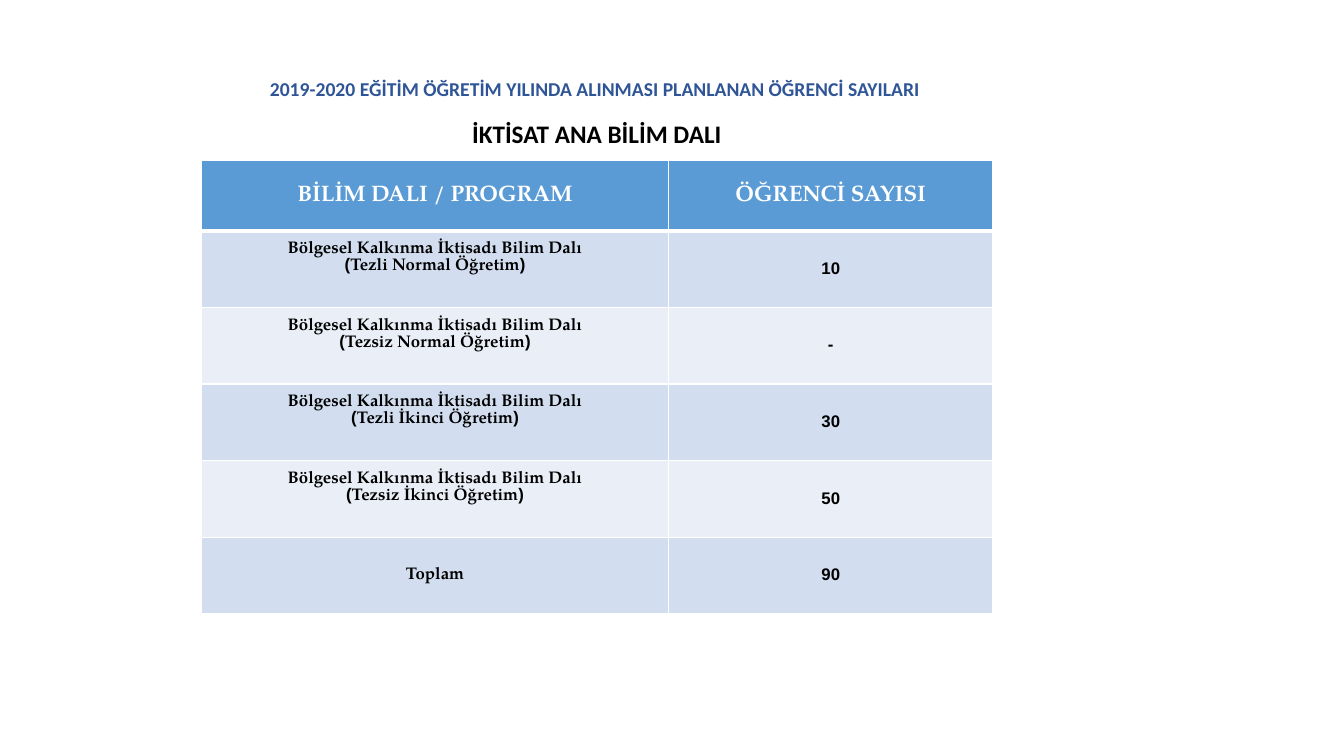
"""Build the slide of planned student numbers for the economics department."""
from lxml.etree import SubElement
from pptx import Presentation
from pptx.dml.color import RGBColor
from pptx.enum.text import MSO_ANCHOR, MSO_AUTO_SIZE, PP_ALIGN
from pptx.oxml.ns import qn
from pptx.util import Inches, Pt

COLORS = {
    "heading": "2F5597",
    "text": "000000",
    "white": "FFFFFF",
    "header": "5B9BD5",
    "odd": "D2DEEF",
    "even": "EAEFF7",
}
FORMATS = {
    "heading": {"name": "Calibri", "size": Pt(14), "bold": True},
    "department": {"name": "Calibri", "size": Pt(18), "bold": True},
    "header": {"name": "TeX Gyre Pagella", "size": Pt(16), "bold": True},
    "body": {"name": "TeX Gyre Pagella", "size": Pt(12), "bold": True},
}
PROGRAM = "Bölgesel Kalkınma İktisadı Bilim Dalı\n"
ROWS = [
    ("BİLİM DALI / PROGRAM", "ÖĞRENCİ SAYISI"),
    (PROGRAM + "(Tezli Normal Öğretim)", "10"),
    (PROGRAM + "(Tezsiz Normal Öğretim)", "-"),
    (PROGRAM + "(Tezli İkinci Öğretim)", "30"),
    (PROGRAM + "(Tezsiz İkinci Öğretim)", "50"),
    ("Toplam", "90"),
]


def write(frame, text, style, color):
    frame.text = text
    for paragraph in frame.paragraphs:
        paragraph.alignment = PP_ALIGN.CENTER
        for run in paragraph.runs:
            for attribute, value in FORMATS[style].items():
                setattr(run.font, attribute, value)
            run.font.color.rgb = RGBColor.from_string(COLORS[color])


def add_border(cell, side, points):
    line = SubElement(cell._tc.get_or_add_tcPr(), qn(f"a:ln{side}"), w=str(Pt(points)))
    SubElement(SubElement(line, qn("a:solidFill")), qn("a:srgbClr"), val=COLORS["white"])


prs = Presentation()
prs.slide_width, prs.slide_height = Inches(13.33), Inches(7.5)
slide = prs.slides.add_slide(prs.slide_layouts[5])

heading = slide.shapes.title
heading.left, heading.top = Inches(2.4), Inches(0.71)
heading.width, heading.height = Inches(7.05), Inches(0.34)
write(heading.text_frame, "2019-2020 EĞİTİM ÖĞRETİM YILINDA ALINMASI PLANLANAN ÖĞRENCİ SAYILARI ", "heading", "heading")
heading.text_frame.vertical_anchor = MSO_ANCHOR.TOP
heading.text_frame.auto_size = MSO_AUTO_SIZE.NONE

department = slide.shapes.add_textbox(Inches(4.57), Inches(1.12), Inches(2.7), Inches(0.4))
department.text_frame.word_wrap = False
write(department.text_frame, "İKTİSAT ANA BİLİM DALI", "department", "text")

quotas = slide.shapes.add_table(len(ROWS), 2, Inches(2), Inches(1.59), Inches(7.85), Inches(4.5)).table
for column, width in zip(quotas.columns, (4.63, 3.22)):
    column.width = Inches(width)

for row_index, values in enumerate(ROWS):
    is_header = row_index == 0
    quotas.rows[row_index].height = Inches(0.7 if is_header else 0.76)
    band = "header" if is_header else ("odd" if row_index % 2 else "even")
    for column_index, value in enumerate(values):
        cell = quotas.cell(row_index, column_index)
        for side in "LRTB":
            under_header = (row_index, side) in ((0, "B"), (1, "T"))
            add_border(cell, side, 3 if under_header else 1)
        cell.fill.solid()
        cell.fill.fore_color.rgb = RGBColor.from_string(COLORS[band])
        cell.vertical_anchor = MSO_ANCHOR.MIDDLE
        cell.margin_left = cell.margin_right = Inches(0.15)
        cell.margin_top = Inches(0.05)
        cell.margin_bottom = Inches(0.27 if "\n" in value else 0.05)
        write(cell.text_frame, value, "header" if is_header else "body", "white" if is_header else "text")
        for paragraph in cell.text_frame.paragraphs:
            paragraph.line_spacing = 0.9
            if not is_header:
                paragraph._p.get_or_add_pPr().set("rtl", "1")
                SubElement(paragraph.runs[0]._r.get_or_add_rPr(), qn("a:cs"), typeface="Arial")

prs.save("out.pptx")
